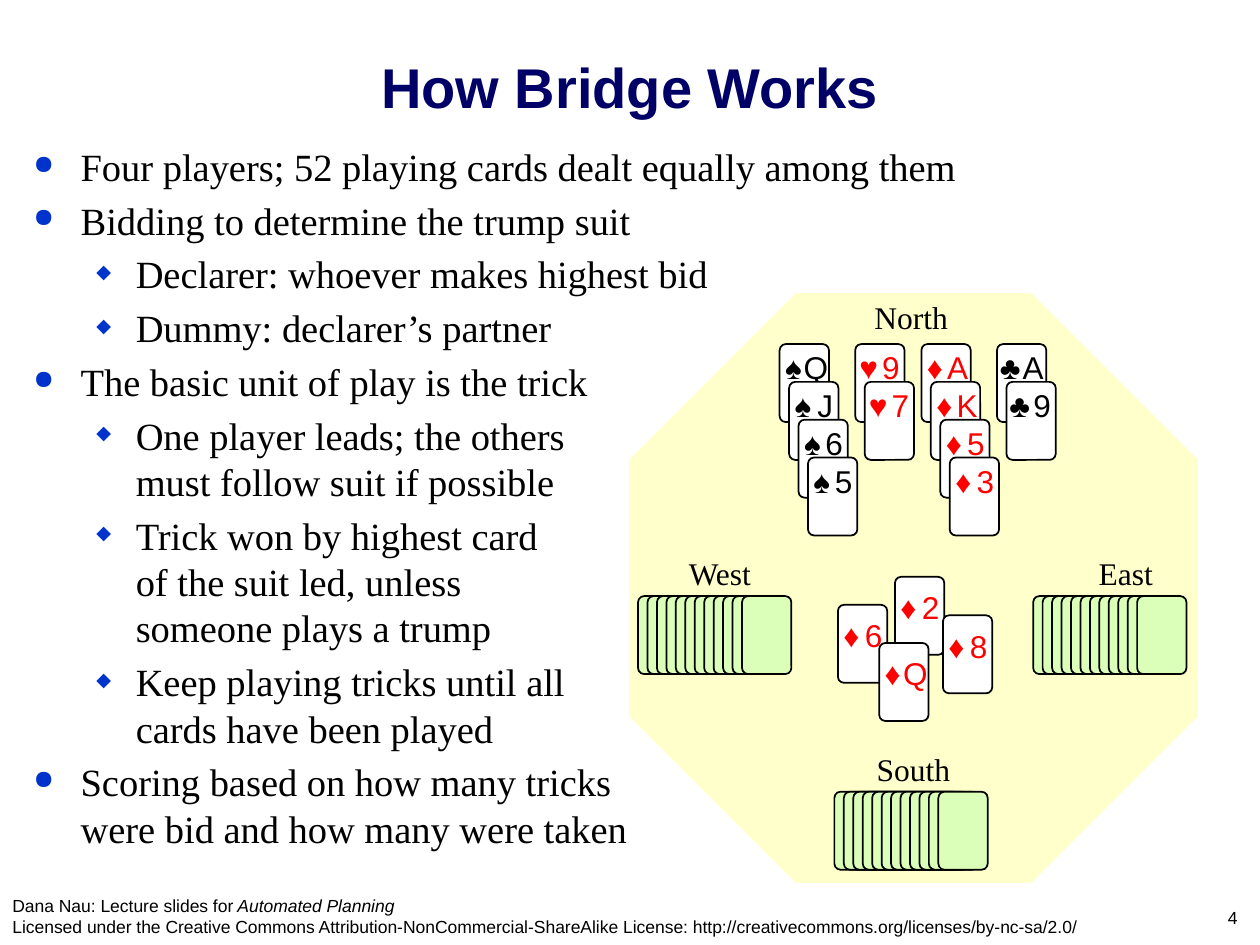
from lxml.etree import SubElement
from pptx import Presentation
from pptx.dml.color import RGBColor
from pptx.enum.shapes import MSO_SHAPE
from pptx.enum.text import MSO_ANCHOR, MSO_AUTO_SIZE, PP_ALIGN
from pptx.oxml.ns import qn
from pptx.util import Pt

COLORS = {"ink": "000000", "red": "FF0000", "title": "000066", "bullet": "0033CC",
          "table": "FFFFCC", "face": "FFFFFF", "back": "DBFFB8"}
CARD_W, CARD_H = 28.2, 44.6
STEP_X, STEP_Y = 5.4, 21.6
GLYPH_W = {"J": 23.4, "Q": 28.4, "A": 26.4, "K": 26.4, "♥": 26.6, "♣": 28}

# (level, text) for each point; "\n" breaks a line
POINTS = [
    (0, "Four players; 52 playing cards dealt equally among them"),
    (0, "Bidding to determine the trump suit"),
    (1, "Declarer: whoever makes highest bid"),
    (1, "Dummy: declarer’s partner"),
    (0, "The basic unit of play is the trick"),
    (1, "One player leads; the others\nmust follow suit if possible"),
    (1, "Trick won by highest card\nof the suit led, unless\nsomeone plays a trump"),
    (1, "Keep playing tricks until all\ncards have been played"),
    (0, "Scoring based on how many tricks\nwere bid and how many were taken"),
]
# level: (bullet, size in percent, left margin, hanging indent)
LEVELS = [("●", 68, 27, 27), ("◆", 50, 58.5, 22.5)]

# Places on the table, relative to its top left corner
HAND = [(85.5, "♠", "QJ65"), (128.7, "♥", "97"), (166.5, "♦", "AK53"), (209.7, "♣", "A9")]
HAND_TOP = 28.6
TRICK = [(118.8, 177.6, "6"), (151.4, 161.6, "2"), (178.8, 183.6, "8"), (142.4, 199.4, "Q")]
PILES = [(4.6, 172.6), (230.4, 172.6), (116.8, 284.4)]
# name, middle, top
SEATS = [("West", 51.4, 145.2), ("North", 160.7, -1),
         ("East", 283.3, 145.2), ("South", 161.9, 256.8)]
SEAT_W = 64


def tint(name):
    return RGBColor.from_string(COLORS[name])


def write(para, text, font="Arial", size=18, color="ink", bold=False, italic=False):
    """Append formatted text to a paragraph, with line breaks at newlines."""
    for i, line in enumerate(text.split("\n")):
        if i:
            para.add_line_break()
        if not line:
            continue
        run = para.add_run()
        run.text = line
        run.font.name = font
        run.font.size = Pt(size)
        run.font.bold = bold
        run.font.italic = italic
        run.font.color.rgb = tint(color)


def add_frame(slide, box, wrap=True, anchor=MSO_ANCHOR.TOP):
    frame = slide.shapes.add_textbox(*map(Pt, box)).text_frame
    frame.word_wrap = wrap
    frame.vertical_anchor = anchor
    if not wrap:
        frame.auto_size = MSO_AUTO_SIZE.SHAPE_TO_FIT_TEXT
    return frame


def add_label(slide, box, text, align=PP_ALIGN.LEFT, wrap=False,
              anchor=MSO_ANCHOR.TOP, **style):
    para = add_frame(slide, box, wrap, anchor).paragraphs[0]
    para.alignment = align
    write(para, text, **style)
    return para


def add_block(slide, kind, box, ratio, fill, line):
    block = slide.shapes.add_shape(kind, *map(Pt, box))
    block.adjustments[0] = ratio
    block.shadow.inherit = False
    block.fill.solid()
    block.fill.fore_color.rgb = tint(fill)
    block.line.color.rgb = tint(line)
    block.line.width = Pt(1)


def add_card(slide, left, top, fill="face"):
    add_block(slide, MSO_SHAPE.ROUNDED_RECTANGLE, (left, top, CARD_W, CARD_H),
              0.125, fill, "ink")


def add_open(slide, left, top, suit, rank, drop):
    """Place a face-up card, its signs starting `drop` below its top edge."""
    add_card(slide, left, top)
    color = "red" if suit in "♥♦" else "ink"
    for sign, mid in ((rank, 20.8), (suit, 8.6)):
        width = GLYPH_W.get(sign, 25)
        add_label(slide, (left + mid - width / 2, top + drop, width, 29), sign, color=color)


def add_pile(slide, left, top, count=12):
    for i in range(count):
        add_card(slide, left + i * STEP_X, top, "back")


def add_table_scene(slide, box):
    left, top = box[:2]
    add_block(slide, MSO_SHAPE.OCTAGON, box, 0.293, "table", "table")
    for name, mid, y in SEATS:
        add_label(slide, (left + mid - SEAT_W / 2, top + y, SEAT_W, 29), name,
                  align=PP_ALIGN.CENTER, wrap=True, font="Times New Roman")
    for x, y, rank in TRICK:
        add_open(slide, left + x, top + y, "♦", rank, 3)
    for x, suit, ranks in HAND:
        for i, rank in enumerate(ranks):
            add_open(slide, left + x + i * STEP_X, top + HAND_TOP + i * STEP_Y,
                     suit, rank, -1.2)
    for x, y in PILES:
        add_pile(slide, left + x, top + y)


def set_bullet(para, level):
    sign, size, margin, hang = LEVELS[level]
    props = para._p.get_or_add_pPr()
    props.set("marL", str(Pt(margin)))
    props.set("indent", str(-Pt(hang)))
    color = SubElement(props, qn("a:buClr"))
    SubElement(color, qn("a:srgbClr")).set("val", COLORS["bullet"])
    SubElement(props, qn("a:buSzPct")).set("val", str(size * 1000))
    SubElement(props, qn("a:buChar")).set("char", sign)


def add_points(slide, box):
    frame = add_frame(slide, box)
    for i, (level, text) in enumerate(POINTS):
        para = frame.add_paragraph() if i else frame.paragraphs[0]
        para.level = level
        para.space_before = Pt(4.4)
        set_bullet(para, level)
        write(para, text, font="Times New Roman", size=22)


def add_footer(slide, box):
    left, top, width, height = box
    para = add_label(slide, (left, top, 626, height), "Dana Nau: Lecture slides for", size=10)
    write(para, " Automated Planning\n", size=10, italic=True)
    write(para, "Licensed under the Creative Commons Attribution-NonCommercial-ShareAlike "
                "License: http://creativecommons.org/licenses/by-nc-sa/2.0/", size=10)
    add_label(slide, (left + width - 43.2, top + 6.5, 37.4, 19), "4",
              align=PP_ALIGN.RIGHT, wrap=True, size=10)


def main():
    deck = Presentation()
    deck.slide_width, deck.slide_height = Pt(720), Pt(540)
    slide = deck.slides.add_slide(deck.slide_layouts[6])
    add_footer(slide, (0, 508, 720, 31))
    add_points(slide, (12, 78, 696, 425))
    add_table_scene(slide, (360, 168, 324, 336))
    add_label(slide, (12, 8, 696, 64), "How Bridge Works", align=PP_ALIGN.CENTER, wrap=True,
              anchor=MSO_ANCHOR.BOTTOM, size=32, color="title", bold=True)
    deck.save("out.pptx")


if __name__ == "__main__":
    main()
